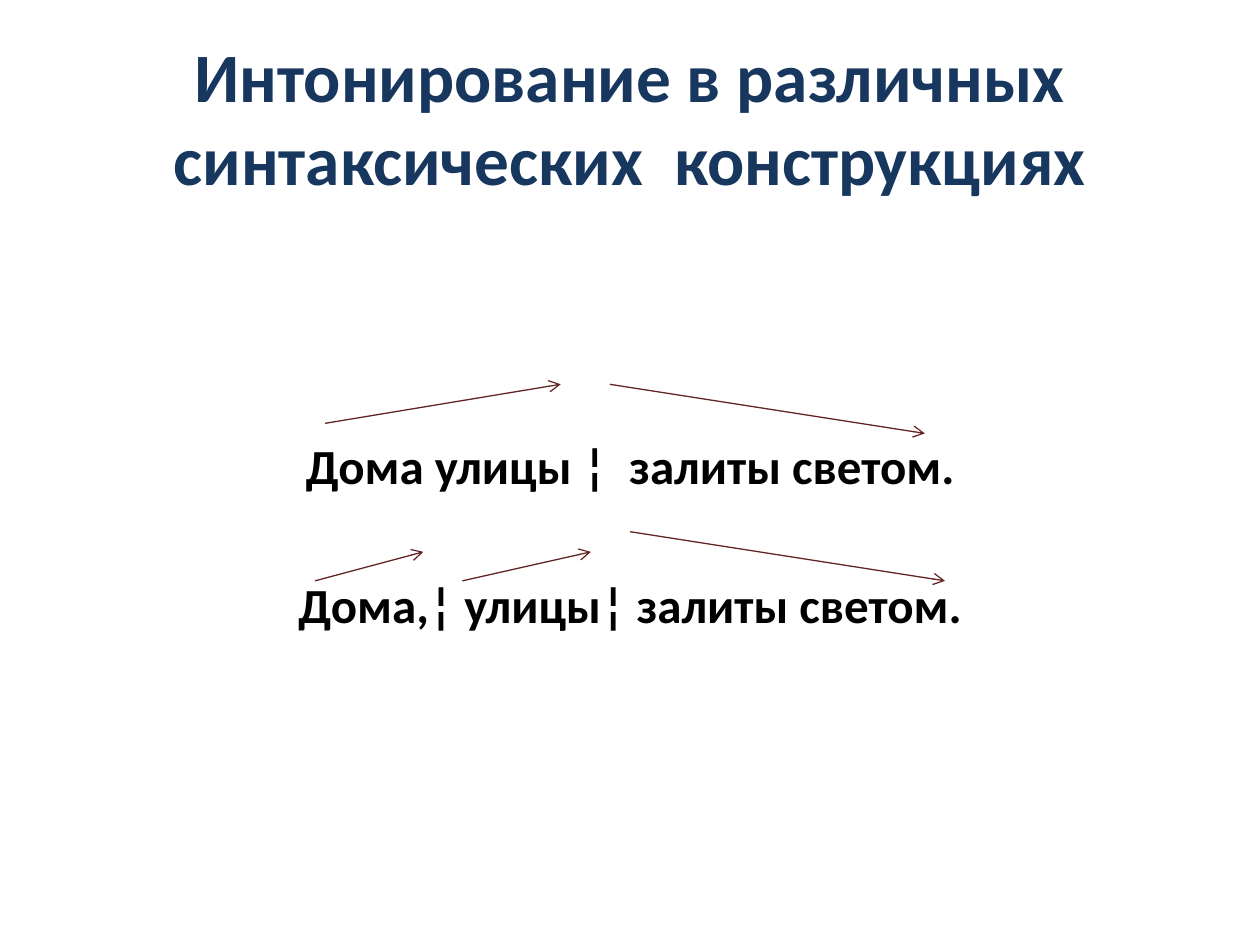
from dataclasses import dataclass

import lxml.etree
import pptx
import pptx.dml.color
import pptx.enum.shapes
import pptx.enum.text
import pptx.oxml.ns
import pptx.util


@dataclass(frozen=True)
class Theme:
    """Colours, type sizes and line width of the slide."""
    font: str = "Calibri"
    title_color: str = "17375E"
    text_color: str = "000000"
    arrow_color: str = "632523"
    title_size: float = 39.6
    text_size: float = 28
    arrow_width: float = 0.75
    sentence_gap: float = 45.5


class SlideBuilder:
    """Places styled elements on one slide, in shares of its size."""

    def __init__(self, presentation, theme):
        self.theme = theme
        self.width = presentation.slide_width
        self.height = presentation.slide_height
        self.slide = presentation.slides.add_slide(presentation.slide_layouts[1])

    def point(self, x, y):
        return round(x * self.width), round(y * self.height)

    def fill_placeholder(self, shape, box, text, size, color):
        shape.left, shape.top = self.point(*box[:2])
        shape.width, shape.height = self.point(*box[2:])
        frame = shape.text_frame
        frame.text = text
        frame.word_wrap = True
        frame.auto_size = pptx.enum.text.MSO_AUTO_SIZE.NONE
        for paragraph in frame.paragraphs:
            paragraph.alignment = pptx.enum.text.PP_ALIGN.CENTER
            for run in paragraph.runs:
                run.font.name = self.theme.font
                run.font.size = pptx.util.Pt(size)
                run.font.bold = True
                run.font.color.rgb = pptx.dml.color.RGBColor.from_string(color)
        return frame

    def title(self, box, text):
        frame = self.fill_placeholder(
            self.slide.shapes.title, box, text, self.theme.title_size, self.theme.title_color)
        frame.vertical_anchor = pptx.enum.text.MSO_ANCHOR.MIDDLE

    def sentences(self, box, lines, top_inset):
        frame = self.fill_placeholder(
            self.slide.placeholders[1], box, "\n".join(lines),
            self.theme.text_size, self.theme.text_color)
        frame.margin_top = round(top_inset * self.height)
        for index, paragraph in enumerate(frame.paragraphs):
            properties = paragraph._p.get_or_add_pPr()
            properties.set("marL", "0")
            properties.set("indent", "0")
            lxml.etree.SubElement(properties, pptx.oxml.ns.qn("a:buNone"))
            paragraph.space_before = pptx.util.Pt(self.theme.sentence_gap if index else 0)

    def arrow(self, start, end):
        connector = self.slide.shapes.add_connector(
            pptx.enum.shapes.MSO_CONNECTOR.STRAIGHT, *self.point(*start), *self.point(*end))
        connector.line.color.rgb = pptx.dml.color.RGBColor.from_string(self.theme.arrow_color)
        connector.line.width = pptx.util.Pt(self.theme.arrow_width)
        line = connector.line._get_or_add_ln()
        lxml.etree.SubElement(line, pptx.oxml.ns.qn("a:tailEnd"), type="arrow")
        lxml.etree.SubElement(connector._element.spPr, pptx.oxml.ns.qn("a:effectLst"))


def main():
    presentation = pptx.Presentation()
    presentation.slide_width = pptx.util.Inches(10)
    presentation.slide_height = pptx.util.Inches(7.5)
    builder = SlideBuilder(presentation, Theme())
    builder.title((0.05, 0.04, 0.9, 1 / 6), "Интонирование в различных синтаксических  конструкциях")
    builder.sentences(
        (0.05, 1.75 / 7.5, 0.9, 0.66),
        ["Дома улицы ¦  залиты светом.", "Дома,¦ улицы¦ залиты светом."],
        top_inset=1.71 / 7.5)
    arrows = [
        (2.58, 3.36, 4.45, 3.05),
        (4.84, 3.05, 7.34, 3.44),
        (5, 4.22, 7.5, 4.61),
        (2.5, 4.61, 3.36, 4.38),
        (3.67, 4.61, 4.69, 4.38),
    ]
    for x1, y1, x2, y2 in arrows:
        builder.arrow((x1 / 10, y1 / 7.5), (x2 / 10, y2 / 7.5))
    presentation.save("out.pptx")


if __name__ == "__main__":
    main()
